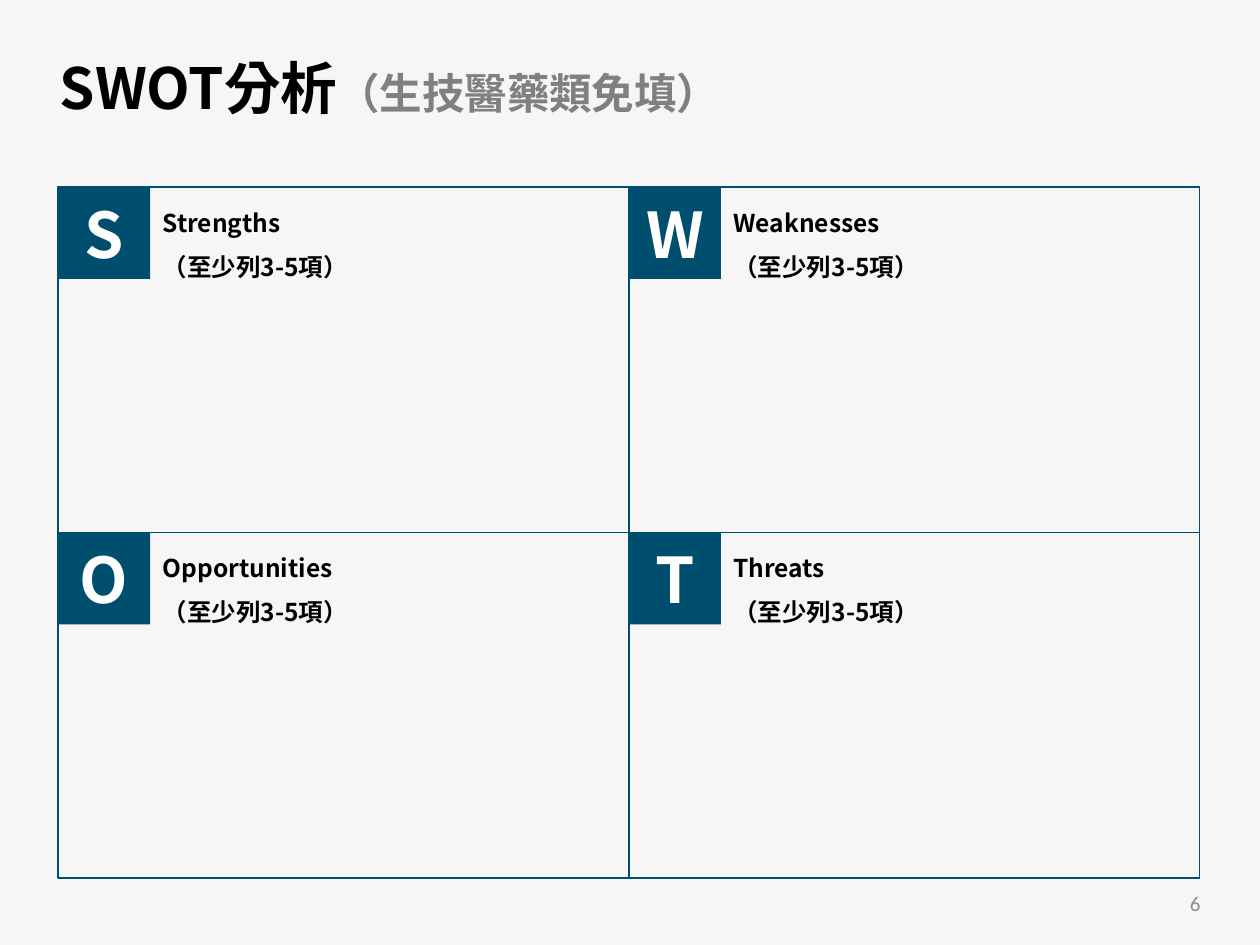
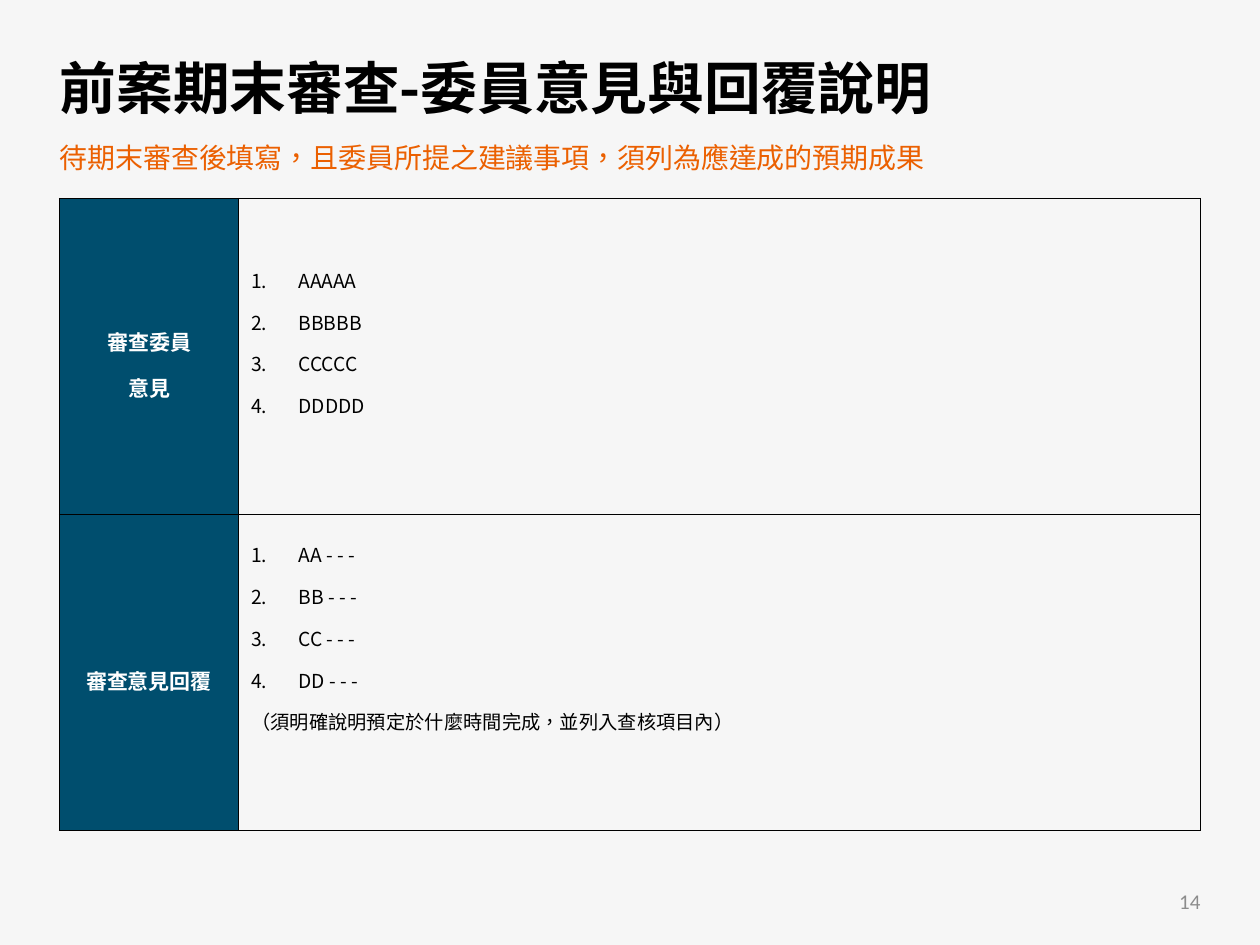
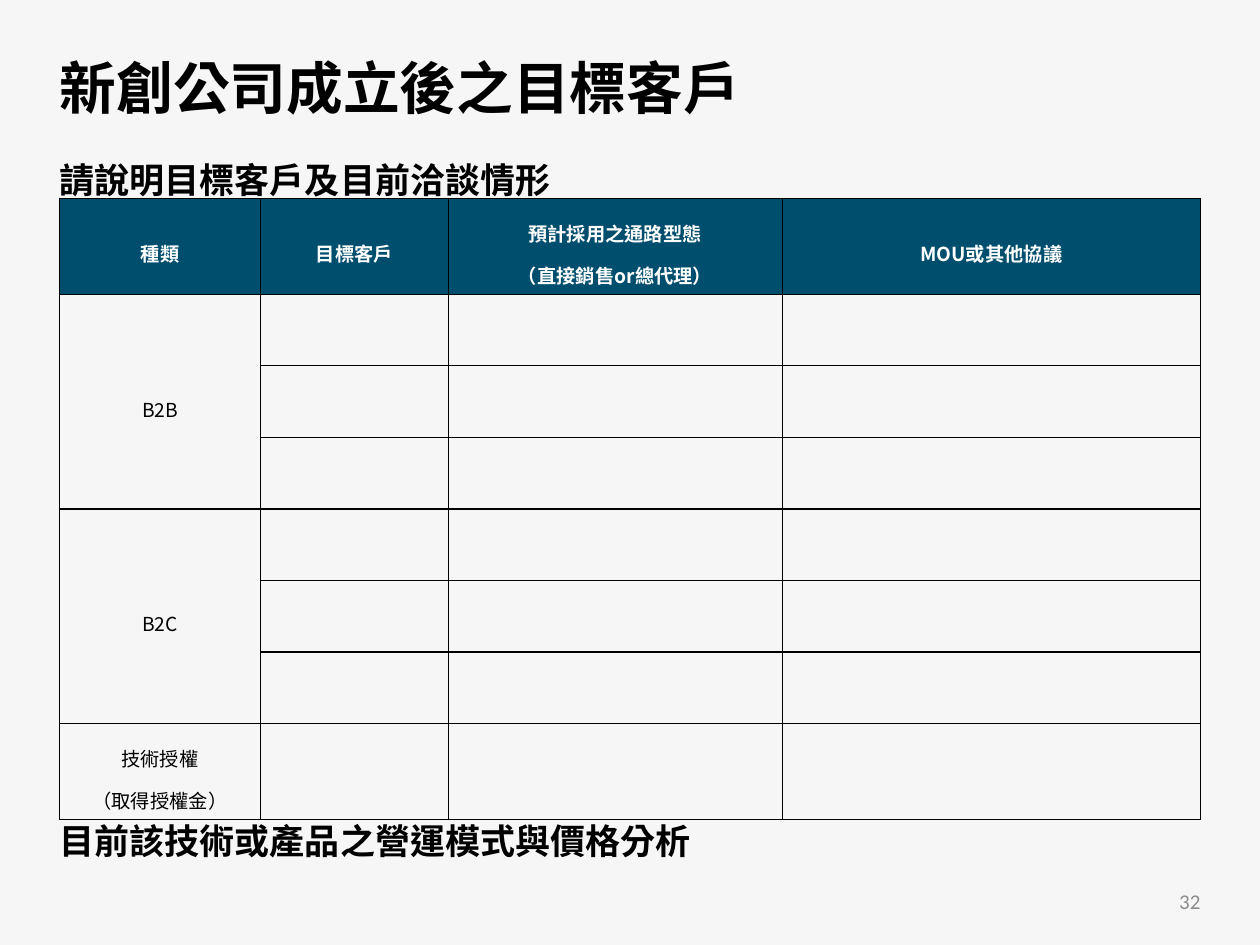
from dataclasses import dataclass

from lxml import etree
from pptx import Presentation
from pptx.dml.color import RGBColor
from pptx.enum.shapes import MSO_SHAPE
from pptx.enum.text import MSO_ANCHOR, PP_ALIGN
from pptx.oxml.ns import qn
from pptx.util import Pt

RECT = MSO_SHAPE.RECTANGLE
TOP, MIDDLE = MSO_ANCHOR.TOP, MSO_ANCHOR.MIDDLE
LEFT, CENTER, RIGHT = PP_ALIGN.LEFT, PP_ALIGN.CENTER, PP_ALIGN.RIGHT


@dataclass(frozen=True)
class Theme:
    font: str = "Noto Sans CJK SC"
    number_font: str = "Calibri"
    paper: RGBColor = RGBColor(0xF6, 0xF6, 0xF6)
    navy: RGBColor = RGBColor(0x00, 0x4E, 0x6E)
    black: RGBColor = RGBColor(0x00, 0x00, 0x00)
    white: RGBColor = RGBColor(0xFF, 0xFF, 0xFF)
    gray: RGBColor = RGBColor(0x80, 0x80, 0x80)
    number_gray: RGBColor = RGBColor(0x8C, 0x8C, 0x8C)
    orange: RGBColor = RGBColor(0xEB, 0x60, 0x01)
    title: float = 32.4
    title_note: float = 24.3
    badge: float = 36
    heading: float = 20
    note: float = 16
    quadrant: float = 14
    label: float = 12
    number: float = 12
    cell: float = 11
    line: float = 0.75


T = Theme()


def write(tf, lines, size, color, bold=False, align=LEFT, spacing=1.0,
          font=T.font, numbered=0):
    """Add one paragraph per line; the first `numbered` ones get 1. 2. 3. numbers."""
    tf.word_wrap = True
    for i, line in enumerate(lines):
        p = tf.paragraphs[0] if i == 0 else tf.add_paragraph()
        p.alignment, p.line_spacing = align, spacing
        if i < numbered:
            pPr = p._p.get_or_add_pPr()
            pPr.set("marL", str(Pt(27)))
            pPr.set("indent", str(-Pt(27)))
            etree.SubElement(pPr, qn("a:buFont"), typeface="+mj-lt")
            etree.SubElement(pPr, qn("a:buAutoNum"), type="arabicPeriod")
        r = p.add_run()
        r.text = line
        r.font.size, r.font.bold = Pt(size), bold
        r.font.color.rgb, r.font.name = color, font
        rPr = r._r.get_or_add_rPr()
        rPr.set("lang", "zh-TW")
        etree.SubElement(rPr, qn("a:ea"), typeface=font)


def add_text(s, box, lines, size, color, anchor=TOP, **style):
    tf = s.shapes.add_textbox(*map(Pt, box)).text_frame
    tf.vertical_anchor = anchor
    write(tf, lines, size, color, **style)
    return tf


prs = Presentation()
prs.slide_width, prs.slide_height = Pt(720), Pt(540)

# Shared background, title and page number
pages = [
    ("SWOT分析", "6", 501.8),
    ("前案期末審查-委員意見與回覆說明", "14", 500.4),
    ("新創公司成立後之目標客戶", "32", 500.4),
]
titles = []
for title, number, number_top in pages:
    s = prs.slides.add_slide(prs.slide_layouts[6])
    s.background.fill.solid()
    s.background.fill.fore_color.rgb = T.paper
    titles.append(add_text(s, (27, 16.3, 666, 58.3), [title], T.title, T.black,
                           anchor=MIDDLE, bold=True, spacing=1.2))
    add_text(s, (531, number_top, 162, 28.8), [number], T.number, T.number_gray,
             anchor=MIDDLE, align=RIGHT, font=T.number_font)
swot, review, customers = prs.slides

# SWOT: title note and a two by two grid
r = titles[0].paragraphs[0].add_run()
r.text = "（生技醫藥類免填）"
r.font.size, r.font.bold = Pt(T.title_note), True
r.font.color.rgb, r.font.name = T.gray, T.font
etree.SubElement(r._r.get_or_add_rPr(), qn("a:ea"), typeface=T.font)

quad_w, quad_h, badge = 326.2, 197.5, 52.6
for i, name in enumerate(["Strengths", "Weaknesses", "Opportunities", "Threats"]):
    row, col = divmod(i, 2)
    x, y = 33.2 + col * quad_w, 106.8 + row * quad_h
    frame = swot.shapes.add_shape(RECT, Pt(x), Pt(y), Pt(quad_w), Pt(quad_h))
    frame.shadow.inherit = False
    frame.fill.background()
    frame.line.color.rgb, frame.line.width = T.navy, Pt(T.line)

    sp = swot.shapes.add_shape(RECT, Pt(x), Pt(y), Pt(badge), Pt(badge))
    sp.shadow.inherit = False
    sp.fill.solid()
    sp.fill.fore_color.rgb = T.navy
    sp.line.fill.background()
    sp.text_frame.vertical_anchor = MIDDLE
    write(sp.text_frame, [name[0]], T.badge, T.white, bold=True, align=CENTER)

    add_text(swot, (x + badge, y, 250.6, 58.5), [name, "（至少列3-5項）"],
             T.quadrant, T.black, bold=True, spacing=1.5)

# Notes above and below the tables
add_text(review, (27, 76.6, 681.8, 26.6),
         ["待期末審查後填寫，且委員所提之建議事項，須列為應達成的預期成果"],
         T.note, T.orange)
for top, height, heading in [(75, 35.3, "請說明目標客戶及目前洽談情形"),
                             (453, 38.2, "目前該技術或產品之營運模式與價格分析")]:
    add_text(customers, (27, top, 659.5, height), [heading],
             T.heading, T.black, bold=True, spacing=1.5)

# Tables
tables = []
for s, widths, heights in [
    (review, [102.4, 549.6], [180.6] * 2),
    (customers, [115, 107.2, 190.8, 239], [54.8] + [40.9] * 6 + [54.8]),
]:
    table = s.shapes.add_table(len(heights), len(widths), Pt(34), Pt(113.4),
                               Pt(sum(widths)), Pt(sum(heights))).table
    table.first_row = table.horz_banding = False
    for column, width in zip(table.columns, widths):
        column.width = Pt(width)
    for row, height in zip(table.rows, heights):
        row.height = Pt(height)
    for cell in table.iter_cells():
        cell.vertical_anchor = MIDDLE
        tcPr = cell._tc.get_or_add_tcPr()
        for side in ("lnL", "lnR", "lnT", "lnB"):
            ln = etree.SubElement(tcPr, qn(f"a:{side}"), w=str(Pt(T.line)))
            fill = etree.SubElement(ln, qn("a:solidFill"))
            etree.SubElement(fill, qn("a:srgbClr"), val=str(T.black))
        cell.fill.background()
    tables.append(table)
review_table, customer_table = tables

# Review table: the bottom inset lifts each list above the middle
replies = [f"{mark} - - -" for mark in ("AA", "BB", "CC", "DD")]
replies.append("（須明確說明預定於什麼時間完成，並列入查核項目內）")
for row, (label, items, bottom) in enumerate([
    (["審查委員", "意見"], ["AAAAA", "BBBBB", "CCCCC", "DDDDD"], 27.5),
    (["審查意見回覆"], replies, 51.4),
]):
    head, body = review_table.cell(row, 0), review_table.cell(row, 1)
    head.fill.solid()
    head.fill.fore_color.rgb = T.navy
    write(head.text_frame, label, T.label, T.white, bold=True, align=CENTER, spacing=1.5)
    body.margin_bottom = Pt(bottom)
    write(body.text_frame, items, T.cell, T.black, spacing=1.5, numbered=4)

# Customer table
headers = [["種類"], ["目標客戶"], ["預計採用之通路型態", "（直接銷售or總代理）"],
           ["MOU或其他協議"]]
for col, lines in enumerate(headers):
    cell = customer_table.cell(0, col)
    cell.fill.solid()
    cell.fill.fore_color.rgb = T.navy
    write(cell.text_frame, lines, T.cell, T.white, bold=True, align=CENTER, spacing=1.5)
for first, last, lines in [(1, 3, ["B2B"]), (4, 6, ["B2C"]),
                           (7, 7, ["技術授權", "（取得授權金）"])]:
    cell = customer_table.cell(first, 0)
    if last > first:
        cell.merge(customer_table.cell(last, 0))
    write(cell.text_frame, lines, T.cell, T.black, align=CENTER, spacing=1.5)

prs.save("out.pptx")
